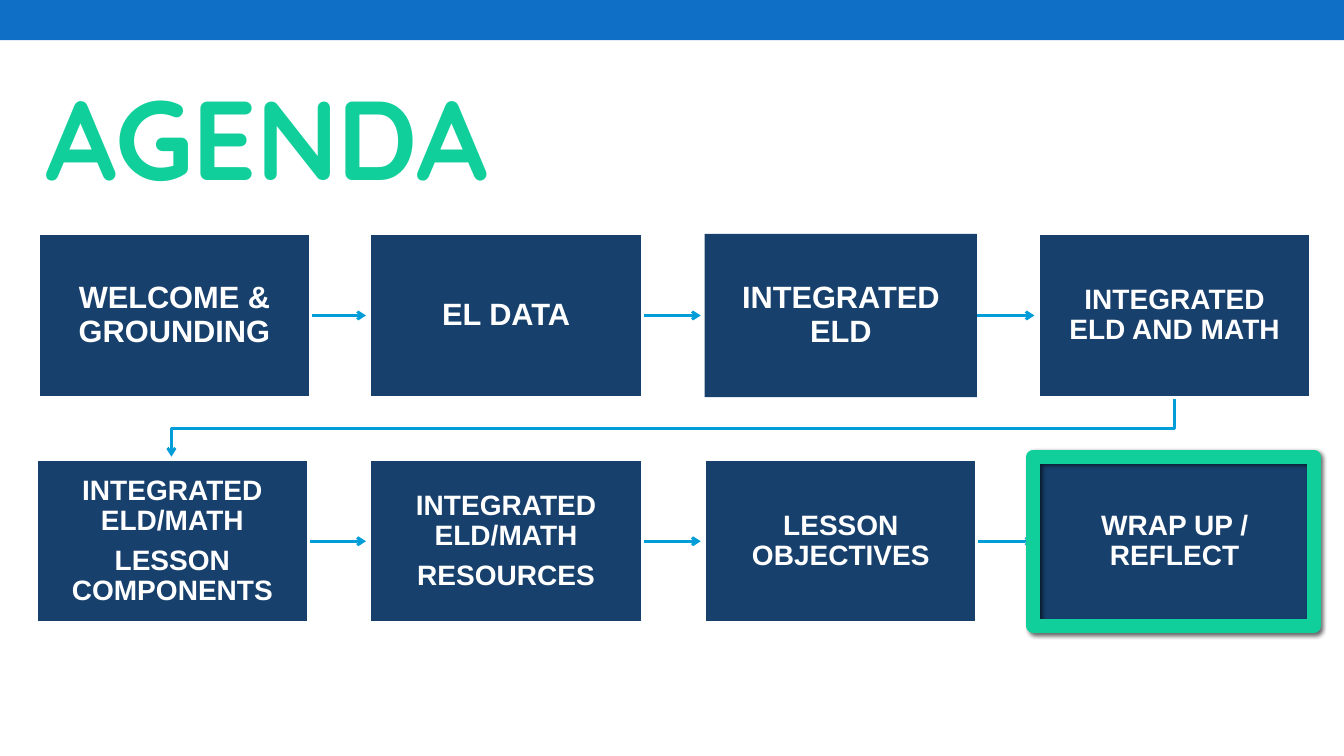
from lxml.etree import SubElement as Sub
from pptx import Presentation
from pptx.dml.color import RGBColor
from pptx.enum.shapes import MSO_CONNECTOR as Link, MSO_SHAPE as Shape
from pptx.enum.text import MSO_ANCHOR as Anchor, PP_ALIGN as Align
from pptx.oxml.ns import qn
from pptx.util import Inches, Pt

BLUE = RGBColor(0x0F, 0x6F, 0xC6)
NAVY = RGBColor(0x17, 0x40, 0x6D)
SKY = RGBColor(0x00, 0x9D, 0xD9)
GREEN = RGBColor(0x10, 0xCF, 0x9B)
WHITE = RGBColor(0xFF, 0xFF, 0xFF)

WIDE, HIGH = 2.7, 1.62
TOPS = (2.32, 4.56)
# Left edge, text, font size and whether the box has a white edge
ROWS = (
    ((0.38, "WELCOME & GROUNDING", 22, True),
     (3.67, "EL DATA", 22, True),
     (6.99, "INTEGRATED ELD", 22, False),
     (10.3, "INTEGRATED ELD AND MATH", 20, True)),
    ((0.36, "INTEGRATED ELD/MATH\nLESSON COMPONENTS", 20, True),
     (3.67, "INTEGRATED ELD/MATH\nRESOURCES", 20, True),
     (6.99, "LESSON OBJECTIVES", 20, True),
     (10.3, "WRAP UP / REFLECT", 20, True)),
)


def add_rect(slide, left, top, width, height, fill=None):
    rect = slide.shapes.add_shape(Shape.RECTANGLE, Inches(left), Inches(top),
                                  Inches(width), Inches(height))
    rect.shadow.inherit = False
    rect.line.fill.background()
    if fill is None:
        rect.fill.background()
    else:
        rect.fill.solid()
        rect.fill.fore_color.rgb = fill
    return rect


def add_step(slide, left, top, text, size, edged):
    box = add_rect(slide, left, top, WIDE, HIGH, NAVY)
    if edged:
        box.line.color.rgb = WHITE
        box.line.width = Pt(2.08)
    frame = box.text_frame
    frame.text = text
    frame.word_wrap = True
    frame.vertical_anchor = Anchor.MIDDLE
    inset = Inches(0.17 if size == 22 else 0.16)
    frame.margin_left = frame.margin_right = inset
    frame.margin_top = frame.margin_bottom = inset
    for par in frame.paragraphs:
        par.alignment = Align.CENTER
        par.line_spacing = 0.9
        par.space_after = Pt(size * 0.35)
        style(par.runs[0].font, "Arial", size, WHITE)


def style(font, name, size, color):
    font.name = name
    font.size = Pt(size)
    font.bold = True
    font.color.rgb = color


def point(shape):
    """Give a line its colour, width and arrowhead."""
    shape.line.color.rgb = SKY
    shape.line.width = Pt(2)
    Sub(shape.line._get_or_add_ln(), qn("a:tailEnd"), type="arrow")


def add_arrow(slide, start, end, mid):
    arrow = slide.shapes.add_connector(Link.STRAIGHT, Inches(start), Inches(mid),
                                       Inches(end), Inches(mid))
    point(arrow)
    Sub(arrow._element.spPr, qn("a:effectLst"))


def add_turn(slide):
    """Lead from the end of the first row to the start of the second."""
    turn = slide.shapes.build_freeform(Inches(11.65), Inches(3.94))
    spots = ((11.65, 4.25), (1.7, 4.25), (1.7, 4.53))
    turn.add_line_segments([(Inches(x), Inches(y)) for x, y in spots], close=False)
    path = turn.convert_to_shape()
    path.fill.background()
    path.shadow.inherit = False
    point(path)


def add_title(slide, text):
    box = slide.shapes.add_textbox(Inches(0.35), Inches(0.48), Inches(11), Inches(1.59))
    frame = box.text_frame
    frame.text = text
    frame.word_wrap = True
    frame.vertical_anchor = Anchor.BOTTOM
    par = frame.paragraphs[0]
    par.line_spacing = 0.85
    run = par.runs[0]
    style(run.font, "Quicksand", 80, GREEN)
    run._r.get_or_add_rPr().set("spc", "-50")


def add_focus(slide):
    """Frame the current step, with a soft shadow."""
    focus = add_rect(slide, 10.25, 4.53, 2.78, 1.68)
    focus.line.color.rgb = GREEN
    focus.line.width = Pt(10)
    Sub(focus.line._get_or_add_ln(), qn("a:round"))
    effects = focus._element.spPr.find(qn("a:effectLst"))
    shade = Sub(effects, qn("a:outerShdw"), blurRad=str(Pt(3)), dist=str(Pt(2)),
                dir="2700000", algn="tl", rotWithShape="0")
    black = Sub(shade, qn("a:srgbClr"), val="000000")
    Sub(black, qn("a:alpha"), val="60000")


def main():
    deck = Presentation()
    deck.slide_width, deck.slide_height = Inches(13.33), Inches(7.5)
    slide = deck.slides.add_slide(deck.slide_layouts[6])
    add_rect(slide, 0, 0, 13.33, 0.4, BLUE)
    add_turn(slide)
    for top, row in zip(TOPS, ROWS):
        for step, after in zip(row, row[1:]):
            add_arrow(slide, step[0] + WIDE, after[0] - 0.04, top + HIGH / 2)
        for left, text, size, edged in row:
            add_step(slide, left, top, text, size, edged)
    add_title(slide, "AGENDA")
    add_focus(slide)
    deck.save("out.pptx")


if __name__ == "__main__":
    main()
